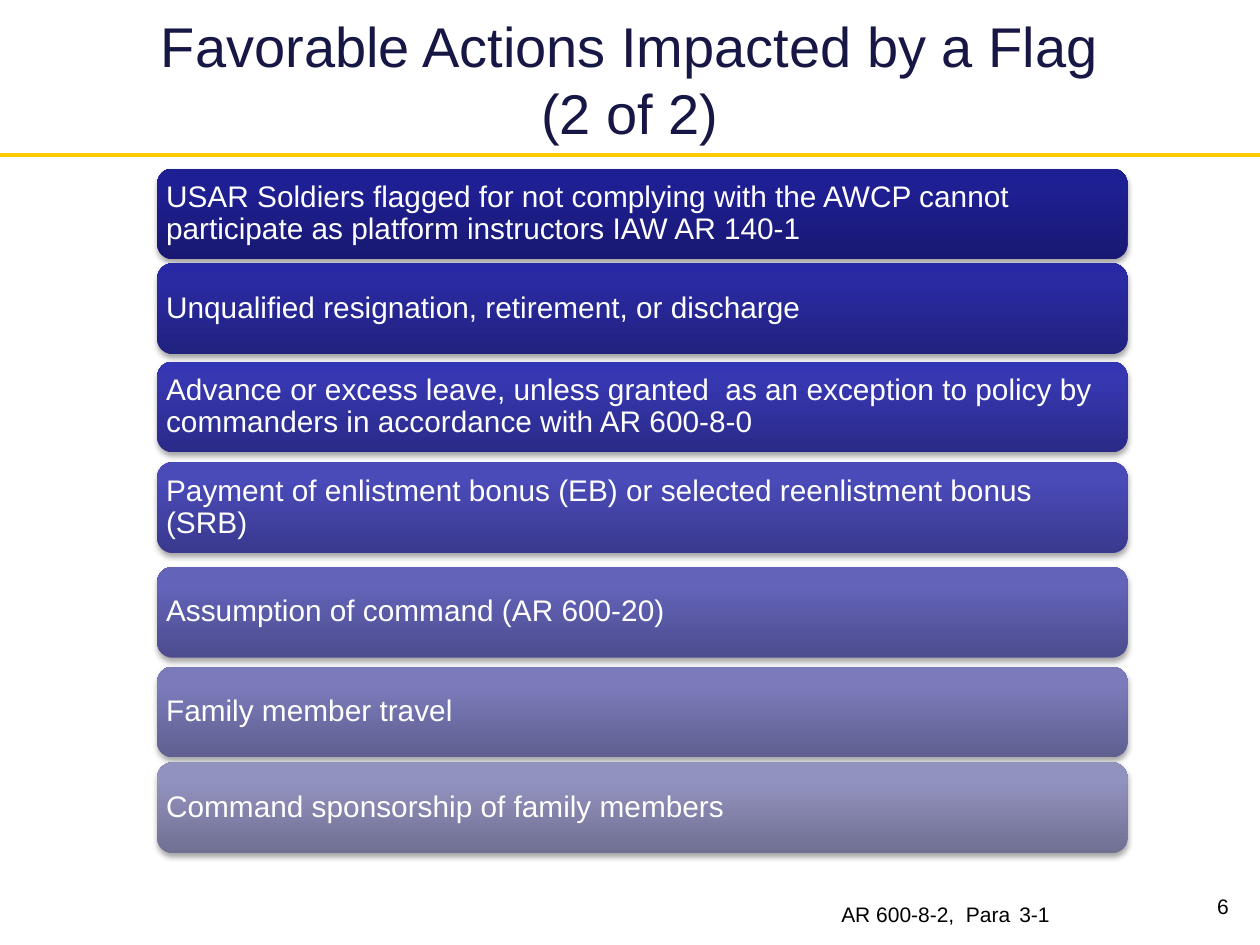
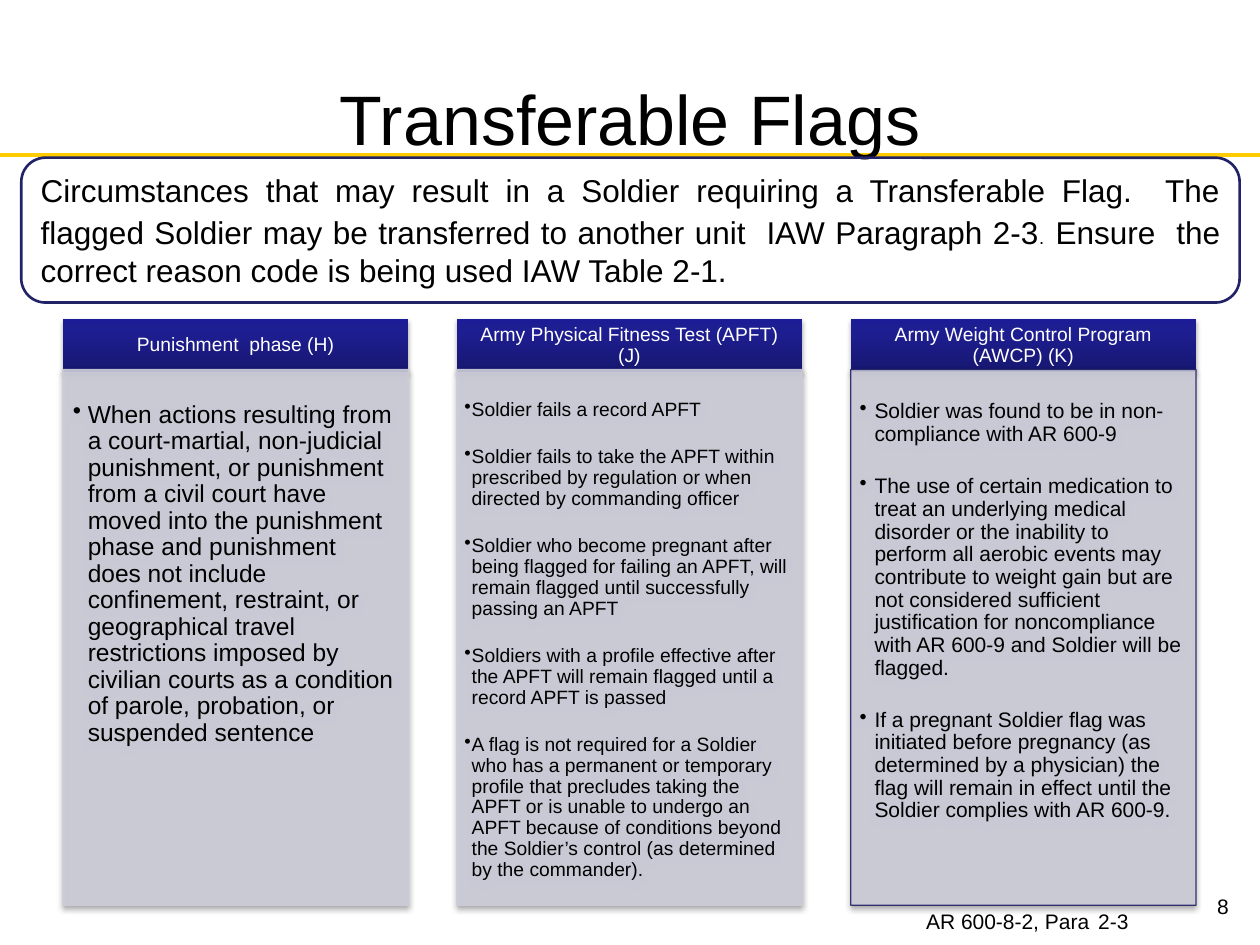
import copy

import pptx
import pptx.dml.color
import pptx.enum.shapes
import pptx.enum.text
import pptx.oxml
import pptx.oxml.ns
import pptx.util

Cm = pptx.util.Cm
Pt = pptx.util.Pt
Shapes = pptx.enum.shapes.MSO_SHAPE
Align = pptx.enum.text.PP_ALIGN
Anchor = pptx.enum.text.MSO_ANCHOR
qn = pptx.oxml.ns.qn

FONT = "Arial"
BLACK, WHITE, GOLD = "000000", "FFFFFF", "FFCC00"
NAVY, TITLE_NAVY, PANEL_GREY = "222267", "171745", "CDCDDA"
HEADER_GRADIENT = ("171771", "1E1E93", "1C1C96")
SLIDE_WIDTH, SLIDE_HEIGHT = 25.4, 19.05
RULE_TOP = 3.12
TITLE_BOX = (1.27, 22.86, 3.18)
NUMBER_BOX = (23.83, 17.88, 1.19, 0.76)

ACTIONS = [
    (3.4, "USAR Soldiers flagged for not complying with the AWCP cannot participate as platform instructors IAW AR 140-1",
     ("181872", "1F1F94", "1D1D97")),
    (5.31, "Unqualified resignation, retirement, or discharge",
     ("21217E", "2A2AA3", "2828A6")),
    (7.29, "Advance or excess leave, unless granted  as an exception to policy by commanders in accordance with AR 600-8-0",
     ("2A2A88", "3737B1", "3434B4")),
    (9.32, "Payment of enlistment bonus (EB) or selected reenlistment bonus (SRB)",
     ("39398E", "4A4AB8", "4848BB")),
    (11.43, "Assumption of command (AR 600-20)",
     ("4C4C8E", "6363B9", "6262BB")),
    (13.44, "Family member travel",
     ("5F5F90", "7B7BBB", "7B7BBD")),
    (15.37, "Command sponsorship of family members",
     ("707093", "9292BF", "9191C0")),
]

FLAG_COLUMNS = [
    dict(header="Punishment  phase (H)", size=14, indent=0.3, gap=0,
         margins=(0.2, 0.66, 0.28, 0.3), outline=PANEL_GREY, items=[
             "When actions resulting from a court-martial, non-judicial punishment, or punishment from a civil court have moved into the punishment phase and punishment does not include confinement, restraint, or geographical travel restrictions imposed by civilian courts as a condition of parole, probation, or suspended sentence",
         ]),
    dict(header="Army Physical Fitness Test (APFT) (J)", size=11, indent=0.15, gap=15.2,
         margins=(0.15, 0.61, 0.23, 0.25), outline=PANEL_GREY, items=[
             "Soldier fails a record APFT",
             "Soldier fails to take the APFT within prescribed by regulation or when directed by commanding officer",
             "Soldier who become pregnant after being flagged for failing an APFT, will remain flagged until successfully passing an APFT",
             "Soldiers with a profile effective after the APFT will remain flagged until a record APFT is passed",
             "A flag is not required for a Soldier who has a permanent or temporary profile that precludes taking the APFT or is unable to undergo an APFT because of conditions beyond the Soldier’s control (as determined by the commander).",
         ]),
    dict(header="Army Weight Control Program (AWCP) (K)", size=12, indent=0.3, gap=16.8,
         margins=(0.18, 0.63, 0.23, 0.25), outline=NAVY, items=[
             "Soldier was found to be in non-compliance with AR 600-9",
             "The use of certain medication to treat an underlying medical disorder or the inability to perform all aerobic events may contribute to weight gain but are not considered sufficient justification for noncompliance with AR 600-9 and Soldier will be flagged.",
             "If a pregnant Soldier flag was initiated before pregnancy (as determined by a physician) the flag will remain in effect until the Soldier complies with AR 600-9.",
         ]),
]


def rgb(value):
    return pptx.dml.color.RGBColor.from_string(value)


def apply_formats(target, formats):
    for name, value in formats.items():
        setattr(target, name, value)


def drawing_element(tag, **attributes):
    element = pptx.oxml.parse_xml(f"<a:{tag} {pptx.oxml.ns.nsdecls('a')}/>")
    for name, value in attributes.items():
        element.set(name, str(value))
    return element


def prepare_frame(shape, margins=(0.25, 0.13, 0.25, 0.13), anchor=Anchor.TOP):
    left, top, right, bottom = margins
    apply_formats(shape.text_frame, {
        "word_wrap": True, "vertical_anchor": anchor,
        "margin_left": Cm(left), "margin_top": Cm(top),
        "margin_right": Cm(right), "margin_bottom": Cm(bottom),
    })
    return shape.text_frame


def write_runs(paragraph, runs, color=BLACK, **formats):
    apply_formats(paragraph, formats)
    for text, size in runs:
        run = paragraph.add_run()
        run.text = text
        apply_formats(run.font, {"name": FONT, "size": Pt(size)})
        run.font.color.rgb = rgb(color)


def add_text(slide, box, runs, color=BLACK, margins=(0.25, 0.13, 0.25, 0.13), **formats):
    shape = slide.shapes.add_textbox(*map(Cm, box))
    write_runs(prepare_frame(shape, margins).paragraphs[0], runs, color, **formats)
    return shape


def add_block(slide, preset, box, fill=None, line=None, line_width=1):
    shape = slide.shapes.add_shape(preset, *map(Cm, box))
    shape.shadow.inherit = False
    if fill:
        shape.fill.solid()
        shape.fill.fore_color.rgb = rgb(fill)
    else:
        shape.fill.background()
    if line:
        shape.line.color.rgb = rgb(line)
        shape.line.width = Pt(line_width)
    else:
        shape.line.fill.background()
    return shape


def fill_gradient(shape, colors):
    shape.fill.gradient()
    shape.fill.gradient_angle = 90
    stop_list = shape.element.spPr.find(".//" + qn("a:gsLst"))
    stop_list.append(copy.deepcopy(stop_list[-1]))
    for stop, color, position in zip(shape.fill.gradient_stops, colors, (0, 0.8, 1)):
        stop.color.rgb = rgb(color)
        stop.position = position


def add_soft_shadow(shape):
    shadow = drawing_element("outerShdw", blurRad=Pt(3.1), dist=Pt(1.8),
                             dir=90 * 60000, rotWithShape=0)
    color = drawing_element("srgbClr", val=BLACK)
    color.append(drawing_element("alpha", val=35000))
    shadow.append(color)
    shape.element.spPr.find(qn("a:effectLst")).append(shadow)


def make_translucent(shape, percent):
    for color in shape.element.spPr.iter(qn("a:srgbClr")):
        if color.getparent().tag == qn("a:solidFill"):
            color.append(drawing_element("alpha", val=percent * 1000))


def add_gradient_label(slide, preset, box, text, size, colors, margins, alignment):
    shape = add_block(slide, preset, box)
    fill_gradient(shape, colors)
    add_soft_shadow(shape)
    frame = prepare_frame(shape, margins, Anchor.MIDDLE)
    write_runs(frame.paragraphs[0], [(text, size)], WHITE,
               alignment=alignment, line_spacing=0.9)


def add_bullet(paragraph, indent):
    properties = paragraph._p.get_or_add_pPr()
    properties.set("marL", str(Cm(indent)))
    properties.set("indent", str(-Cm(indent)))
    properties.append(drawing_element("buChar", char="•"))


def add_title(slide, top, text, size, color):
    left, width, height = TITLE_BOX
    shape = add_text(slide, (left, top, width, height), [], margins=(0.25, 0.23, 0.25, 0.13))
    paragraph = shape.text_frame.paragraphs[0]
    for index, line in enumerate(text.split("\n")):
        if index:
            paragraph.add_line_break()
        write_runs(paragraph, [(line, size)], color, alignment=Align.CENTER)


def add_reference(slide, box, source, paragraph_number):
    shape = add_block(slide, Shapes.RECTANGLE, box, WHITE, WHITE)
    runs = [(source, 12), (" ", 18), (paragraph_number, 12)]
    write_runs(prepare_frame(shape).paragraphs[0], runs, alignment=Align.LEFT)


def add_base_slide(presentation, number):
    slide = presentation.slides.add_slide(presentation.slide_layouts[6])
    rule = slide.shapes.add_connector(
        pptx.enum.shapes.MSO_CONNECTOR.STRAIGHT,
        Cm(0), Cm(RULE_TOP), Cm(SLIDE_WIDTH), Cm(RULE_TOP))
    rule.line.color.rgb = rgb(GOLD)
    rule.line.width = Pt(2.25)
    rule._element.spPr.append(drawing_element("effectLst"))
    add_text(slide, NUMBER_BOX, [(number, 12)], alignment=Align.RIGHT)
    return slide


def add_flag_column(slide, box, column):
    left, top, width, height = box
    header_height, panel_offset = 1.07, 1.02
    add_gradient_label(slide, Shapes.RECTANGLE, (left, top, width, header_height),
                       column["header"], 11, HEADER_GRADIENT,
                       (0.23, 0.13, 0.23, 0.13), Align.CENTER)
    panel = add_block(slide, Shapes.RECTANGLE,
                      (left, top + panel_offset, width, height - panel_offset),
                      PANEL_GREY, column["outline"], 0.75)
    make_translucent(panel, 90)
    add_soft_shadow(panel)
    frame = prepare_frame(panel, column["margins"])
    for index, item in enumerate(column["items"]):
        paragraph = frame.add_paragraph() if index else frame.paragraphs[0]
        add_bullet(paragraph, column["indent"])
        write_runs(paragraph, [(item, column["size"])], alignment=Align.LEFT,
                   line_spacing=0.9, space_before=Pt(column["gap"] if index else 0))


def add_circumstances(slide, box):
    shape = add_block(slide, Shapes.ROUNDED_RECTANGLE, box, line=NAVY, line_width=1.5)
    frame = prepare_frame(shape, anchor=Anchor.MIDDLE)
    write_runs(frame.paragraphs[0], [
        ("Circumstances that may result in a Soldier requiring a Transferable Flag.  The flagged Soldier may be transferred to another unit  IAW Paragraph 2-3", 18),
        (".", 10.5),
        (" ", 20),
        ("Ensure  the correct reason code is being used IAW Table 2-1.", 18),
    ], alignment=Align.JUSTIFY)


def build_actions_slide(presentation):
    slide = add_base_slide(presentation, "6")
    for top, text, colors in ACTIONS:
        add_gradient_label(slide, Shapes.ROUNDED_RECTANGLE, (3.17, top, 19.56, 1.83),
                           text, 17, colors, (0.09, 0.09, 0.09, 0.09), Align.LEFT)
    add_title(slide, 0, "Favorable Actions Impacted by a Flag\n(2 of 2)", 32, TITLE_NAVY)
    add_reference(slide, (16.71, 17.83, 6.55, 1.07), "AR 600-8-2,  Para", "3-1")


def build_transferable_slide(presentation):
    slide = add_base_slide(presentation, "8")
    add_reference(slide, (18.42, 17.98, 5.28, 0.84), "AR 600-8-2, Para", "2-3")
    add_title(slide, 1.3, "Transferable Flags", 40, BLACK)
    for index, column in enumerate(FLAG_COLUMNS):
        add_flag_column(slide, (1.27 + 7.94 * index, 6.43, 6.96, 11.82), column)
    add_circumstances(slide, (0.43, 3.18, 24.56, 2.92))


def main():
    presentation = pptx.Presentation()
    apply_formats(presentation, {"slide_width": Cm(SLIDE_WIDTH), "slide_height": Cm(SLIDE_HEIGHT)})
    build_actions_slide(presentation)
    build_transferable_slide(presentation)
    presentation.save("out.pptx")


if __name__ == "__main__":
    main()
